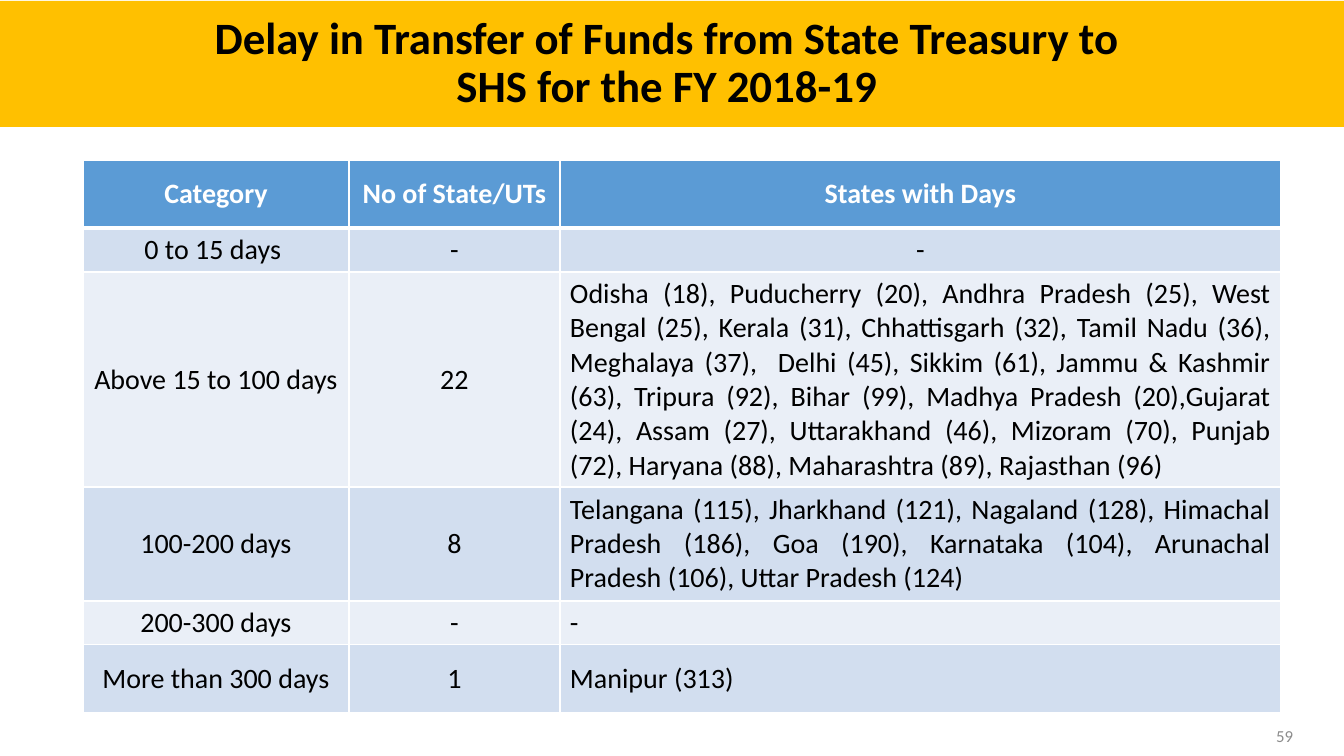
from pptx import Presentation
from pptx.dml.color import RGBColor
from pptx.enum.text import MSO_ANCHOR as Anchor, MSO_AUTO_SIZE as AutoSize, PP_ALIGN as Align
from pptx.oxml.ns import qn
from pptx.util import Emu, Pt
from lxml.etree import SubElement

AMBER = RGBColor(0xFF, 0xC0, 0x00)
BLUE = RGBColor(0x5B, 0x9B, 0xD5)
BAND = RGBColor(0xD2, 0xDE, 0xEF)
BAND_LIGHT = RGBColor(0xEA, 0xEF, 0xF7)
GREY = RGBColor(0x8C, 0x8C, 0x8C)
BLACK = RGBColor(0x00, 0x00, 0x00)
WHITE = RGBColor(0xFF, 0xFF, 0xFF)

HEADINGS = ("Category", "No of State/UTs", "States with Days")
DELAYS = (
    ("0 to 15 days ", "-", "-"),
    ("Above 15 to 100 days", "22",
     "Odisha (18), Puducherry (20), Andhra Pradesh (25), West Bengal (25), "
     "Kerala (31), Chhattisgarh (32), Tamil Nadu (36), Meghalaya (37),  "
     "Delhi (45), Sikkim (61), Jammu & Kashmir (63), Tripura (92), Bihar (99), "
     "Madhya Pradesh (20),Gujarat (24), Assam (27), Uttarakhand (46), "
     "Mizoram (70), Punjab (72), Haryana (88), Maharashtra (89), Rajasthan (96)"),
    ("100-200 days", "8",
     "Telangana (115), Jharkhand (121), Nagaland (128), Himachal Pradesh (186), "
     "Goa (190), Karnataka (104), Arunachal Pradesh (106), Uttar Pradesh (124)"),
    ("200-300 days", "-", "-"),
    ("More than 300 days", "1", "Manipur (313)"),
)
COLUMN_WIDTHS = (266, 211, 721)
ROW_HEIGHTS = (68, 44, 215, 114, 44, 68)


def px(count):
    return Emu(round(count * 914400 / 100.8))


class SlideBuilder:
    font = "Calibri"

    def __init__(self, deck):
        self.slide = deck.slides.add_slide(deck.slide_layouts[5])

    def set_text(self, frame, text, size, color, align, bold=False):
        frame.text = text
        for paragraph in frame.paragraphs:
            paragraph.alignment = align
            for run in paragraph.runs:
                run.font.name = self.font
                run.font.size = Pt(size)
                run.font.bold = bold
                run.font.color.rgb = color

    def place(self, shape, left, top, width, height):
        shape.left, shape.top = px(left), px(top)
        shape.width, shape.height = px(width), px(height)

    def title(self, text, *box):
        banner = self.slide.shapes.title
        self.place(banner, *box)
        banner.fill.solid()
        banner.fill.fore_color.rgb = AMBER
        frame = banner.text_frame
        frame.auto_size = AutoSize.NONE
        frame.word_wrap = True
        frame.vertical_anchor = Anchor.MIDDLE
        frame.margin_left = frame.margin_right = px(12)
        frame.margin_top = frame.margin_bottom = px(6)
        self.set_text(frame, text, 32, BLACK, Align.CENTER, True)
        frame.paragraphs[0].line_spacing = 0.9

    def page_number(self, text, *box):
        frame = self.slide.shapes.add_textbox(*map(px, box)).text_frame
        frame.word_wrap = True
        frame.vertical_anchor = Anchor.MIDDLE
        self.set_text(frame, text, 12, GREY, Align.RIGHT)

    def borders(self, cell, **widths):
        properties = cell._tc.get_or_add_tcPr()
        for side in "LRTB":
            line = SubElement(properties, qn(f"a:ln{side}"), w=str(Pt(widths.get(side, 1))))
            fill = SubElement(line, qn("a:solidFill"))
            SubElement(fill, qn("a:srgbClr"), val=str(WHITE))

    def table(self, left, top, rows, widths, heights):
        frame = self.slide.shapes.add_table(
            len(rows), len(widths), px(left), px(top), px(sum(widths)), px(sum(heights)))
        grid = frame.table
        for column, width in zip(grid.columns, widths):
            column.width = px(width)
        for row, height in zip(grid.rows, heights):
            row.height = px(height)
        for r, texts in enumerate(rows):
            header = r == 0
            fill = BLUE if header else (BAND_LIGHT, BAND)[r % 2]
            for c, text in enumerate(texts):
                cell = grid.cell(r, c)
                cell.vertical_anchor = Anchor.MIDDLE
                self.borders(cell, T=3 if r == 1 else 1, B=3 if header else 1)
                cell.fill.solid()
                cell.fill.fore_color.rgb = fill
                align = Align.JUSTIFY if c == 2 and r > 1 else Align.CENTER
                self.set_text(cell.text_frame, text, 20, WHITE if header else BLACK, align, header)


def main():
    deck = Presentation()
    deck.slide_width, deck.slide_height = px(1344), px(756)
    builder = SlideBuilder(deck)
    builder.title("Delay in Transfer of Funds from State Treasury to \vSHS for the FY 2018-19 ",
                  0, 1, 1344, 126)
    builder.page_number("59", 1001, 716, 302, 40)
    builder.table(83, 160, (HEADINGS, *DELAYS), COLUMN_WIDTHS, ROW_HEIGHTS)
    deck.save("out.pptx")


if __name__ == "__main__":
    main()
